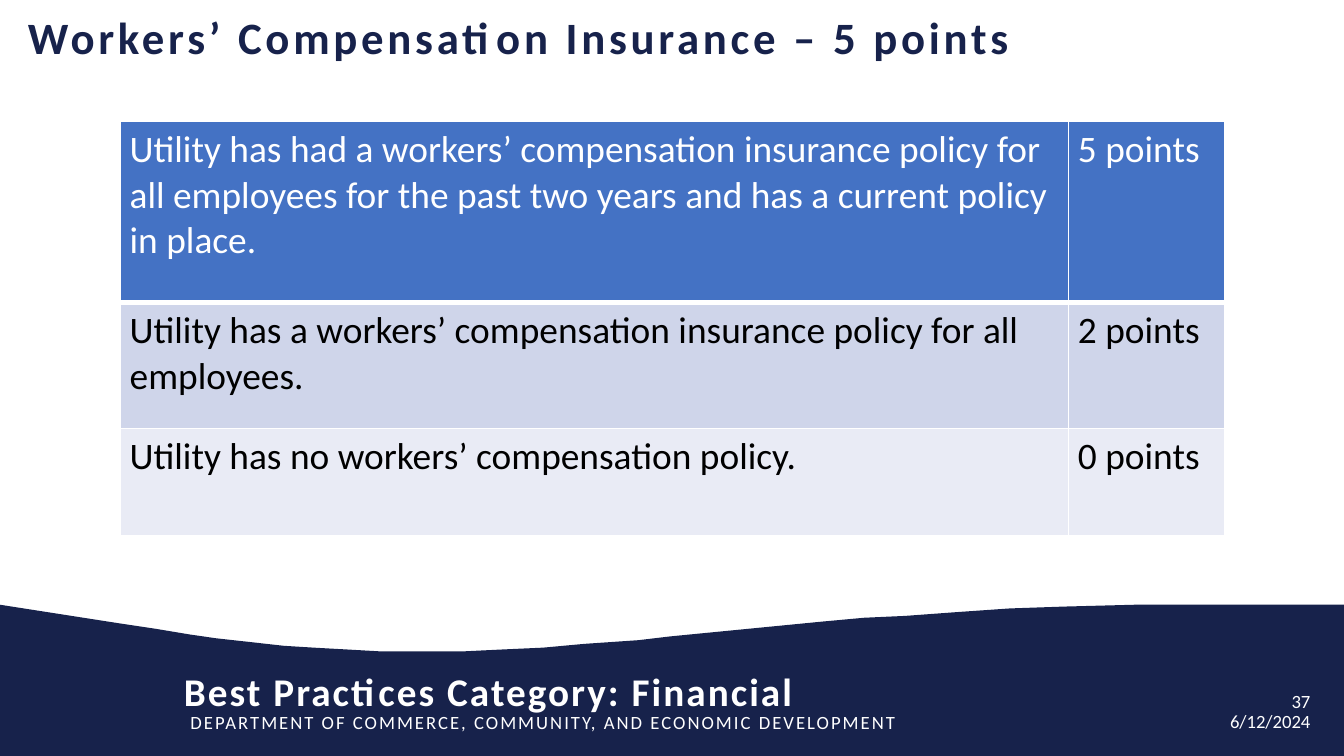
"""Build the workers' compensation insurance scoring slide."""
from lxml import etree
from pptx import Presentation
from pptx import util as u
from pptx.dml import color as c
from pptx.enum import text as t
from pptx.oxml import ns

COLORS = {"navy": "17224B", "white": "FFFFFF", "black": "000000",
          "head": "4472C4", "band": "CFD5EA", "light": "E9EBF5"}


def write(frame, words, size, color, bold=False, spacing=0, align=t.PP_ALIGN.LEFT):
    line = frame.paragraphs[0]
    line.alignment = align
    run = line.add_run()
    run.text = words
    looks = {"name": "Calibri", "size": u.Pt(size), "bold": bold}
    for key, value in looks.items():
        setattr(run.font, key, value)
    run.font.color.rgb = c.RGBColor.from_string(COLORS[color])
    if spacing:
        run.font._element.set("spc", str(int(spacing * 100)))


def place(shape, box, inset):
    for key, value in zip(("left", "top", "width", "height"), box):
        setattr(shape, key, u.Pt(value))
    frame = shape.text_frame
    formats = {"word_wrap": True, "auto_size": t.MSO_AUTO_SIZE.NONE,
               "vertical_anchor": t.MSO_ANCHOR.TOP,
               "margin_left": u.Pt(inset[0]), "margin_right": u.Pt(inset[0]),
               "margin_top": u.Pt(inset[1]), "margin_bottom": u.Pt(inset[1])}
    for key, value in formats.items():
        setattr(frame, key, value)
    return frame


deck = Presentation()
deck.slide_width, deck.slide_height = u.Pt(720), u.Pt(405)
slide = deck.slides.add_slide(deck.slide_layouts[5])

crest = [(0, 324), (64, 334.1), (83.5, 337), (101.5, 339.8), (116, 342), (134, 344.2),
         (152, 345.9), (168.5, 347.2), (186, 348.3), (204, 349), (226, 349.3),
         (248, 349), (269, 348.2), (291, 346.9), (313, 345.3), (342, 342.7),
         (359, 341), (441, 333.2), (463, 331.2), (485, 329.5), (512, 327.8),
         (541, 326.3), (570, 325.2), (608, 324.4), (647, 324.1), (685, 324), (720, 324)]
builder = slide.shapes.build_freeform(*crest[0], scale=u.Pt(1))
builder.add_line_segments(crest[1:] + [(720, 405), (0, 405)])
wave = builder.convert_to_shape()
wave.shadow.inherit = False
wave.fill.solid()
wave.fill.fore_color.rgb = c.RGBColor.from_string(COLORS["navy"])
wave.line.fill.background()

heading = place(slide.shapes.title, (15, 5, 549.5, 58), (0, 0))
write(heading, "Workers’ Compensation Insurance – 5 points", 24, "navy", True, 2)

right = t.PP_ALIGN.RIGHT
footers = [
    ("DEPARTMENT OF COMMERCE, COMMUNITY, AND ECONOMIC DEVELOPMENT",
     (95, 377.3, 454, 19.5), (7.2, 3.6), {"size": 10, "spacing": 1.1}),
    ("Best Practices Category: Financial",
     (98.5, 357.4, 450, 25), (0, 0), {"size": 21, "bold": True, "spacing": 1.1}),
    ("37", (536, 369.5, 166, 12), (0, 0), {"size": 10, "align": right}),
    ("6/12/2024", (641.5, 380, 60.5, 12), (0, 0), {"size": 10, "align": right}),
]
for words, box, inset, look in footers:
    footer = slide.shapes.add_textbox(0, 0, 0, 0)
    write(place(footer, box, inset), words, color="white", **look)

criteria = [
    ("Utility has had a workers’ compensation insurance policy for all employees "
     "for the past two years and has a current policy in place.",
     "5 points", 97, "head", "white"),
    ("Utility has a workers’ compensation insurance policy for all employees.",
     "2 points", 67.7, "band", "black"),
    ("Utility has no workers’ compensation policy.", "0 points", 57.6, "light", "black"),
]
scores = slide.shapes.add_table(3, 2, u.Pt(64.5), u.Pt(65), u.Pt(591.5), u.Pt(222.3)).table
for column, width in zip(scores.columns, (508, 83.5)):
    column.width = u.Pt(width)
margins = {"margin_left": u.Pt(5), "margin_right": u.Pt(5),
           "margin_top": u.Pt(3), "margin_bottom": u.Pt(3)}
for row, (rule, points, height, fill, ink) in enumerate(criteria):
    scores.rows[row].height = u.Pt(height)
    for col, words in enumerate((rule, points)):
        cell = scores.cell(row, col)
        for key, value in margins.items():
            setattr(cell, key, value)
        write(cell.text_frame, words, 20, ink)
        props = cell._tc.get_or_add_tcPr()
        for side in "LRTB":
            thick = (row, side) in ((0, "B"), (1, "T"))
            border = etree.SubElement(props, ns.qn(f"a:ln{side}"), w=str(u.Pt(3 if thick else 1)))
            paint = etree.SubElement(border, ns.qn("a:solidFill"))
            etree.SubElement(paint, ns.qn("a:srgbClr"), val=COLORS["white"])
        cell.fill.solid()
        cell.fill.fore_color.rgb = c.RGBColor.from_string(COLORS[fill])

deck.save("out.pptx")
